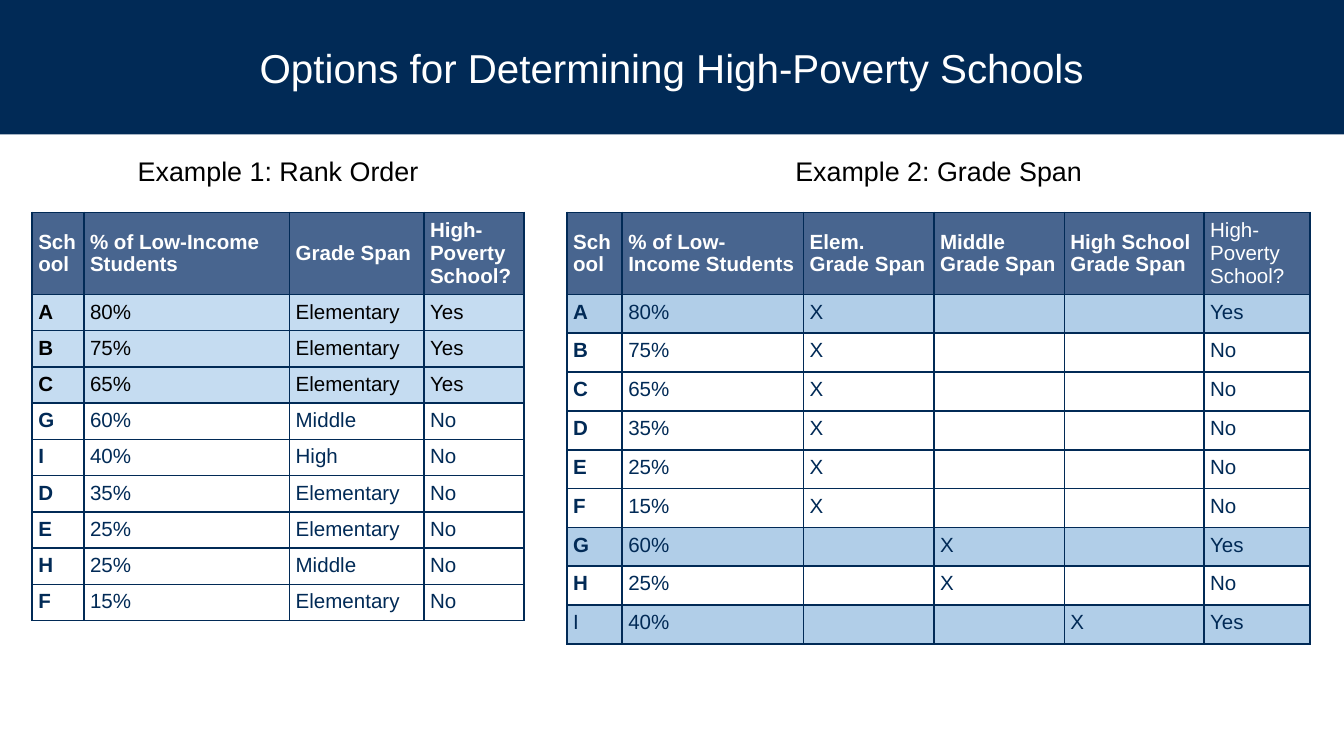
import lxml.etree
import pptx
import pptx.dml.color
import pptx.enum.shapes
import pptx.enum.text
import pptx.oxml.ns
import pptx.util

WIDTH = 10
HEIGHT = WIDTH * 9 / 16
COLUMNS = 100  # square grid cells across the slide
NAVY, SLATE, WHITE, BLACK = "012A56", "48658F", "FFFFFF", "000000"
PALE_BLUE, MID_BLUE = "C5DCF1", "B1CEE8"


def color(hex_text):
    return pptx.dml.color.RGBColor.from_string(hex_text)


def grid(units):
    return pptx.util.Inches(units * WIDTH / COLUMNS)


def sub(parent, tag, **attrs):
    return lxml.etree.SubElement(parent, pptx.oxml.ns.qn(tag), **attrs)


class Deck:
    font = "Arial"
    cell_size = 11
    side_inset = 0.45
    header_insets = (0.3, 0.3)  # top, bottom
    body_insets = (0.45, 0.4)
    header_row = 6.1

    def __init__(self):
        self.prs = pptx.Presentation()
        self.prs.slide_width = pptx.util.Inches(WIDTH)
        self.prs.slide_height = pptx.util.Inches(HEIGHT)
        self.s = self.prs.slides.add_slide(self.prs.slide_layouts[6])

    def band(self, x, y, w, h, fill):
        sp = self.s.shapes.add_shape(
            pptx.enum.shapes.MSO_SHAPE.RECTANGLE, *map(grid, (x, y, w, h)))
        sp.shadow.inherit = False
        sp.fill.solid()
        sp.fill.fore_color.rgb = color(fill)
        sp.line.fill.background()

    def style_runs(self, p, size, ink, bold=False):
        for r in p.runs:
            r.font.name = self.font
            r.font.size = pptx.util.Pt(size)
            r.font.bold = bold
            r.font.color.rgb = color(ink)

    def heading(self, text, x, y, w, h, size, ink):
        sp = self.s.shapes.add_textbox(*map(grid, (x, y, w, h)))
        tf = sp.text_frame
        tf.word_wrap = True
        tf.vertical_anchor = pptx.enum.text.MSO_ANCHOR.MIDDLE
        tf.margin_left = tf.margin_right = grid(0.7)
        tf.margin_top = tf.margin_bottom = grid(0.4)
        tf.text = text
        p = tf.paragraphs[0]
        p.alignment = pptx.enum.text.PP_ALIGN.CENTER
        p.space_before = pptx.util.Pt(5)
        self.style_runs(p, size, ink)

    def borders(self, cell):
        tc_pr = cell._tc.get_or_add_tcPr()
        for side in ("a:lnL", "a:lnR", "a:lnT", "a:lnB"):
            ln = sub(tc_pr, side, w=str(pptx.util.Pt(1)))
            sub(sub(ln, "a:solidFill"), "a:srgbClr", val=NAVY)

    def cell(self, cell, text, ink, fill=None, bold=False, header=False):
        self.borders(cell)
        if fill:
            cell.fill.solid()
            cell.fill.fore_color.rgb = color(fill)
        else:
            cell.fill.background()
        cell.margin_left = cell.margin_right = grid(self.side_inset)
        insets = self.header_insets if header else self.body_insets
        cell.margin_top, cell.margin_bottom = map(grid, insets)
        if header:
            cell.vertical_anchor = pptx.enum.text.MSO_ANCHOR.MIDDLE
        cell.text_frame.text = text
        for p in cell.text_frame.paragraphs:
            self.style_runs(p, self.cell_size, ink, bold)
            # the end mark also counts towards the row height
            end = sub(p._p, "a:endParaRPr", sz=str(self.cell_size * 100))
            sub(end, "a:latin", typeface=self.font)

    def example(self, caption, x, widths, row_height, header, rows,
                yes_fill, yes_ink, plain=()):
        """Captioned table; "Yes" rows are shaded, cells in plain are never bold."""
        w = sum(widths)
        self.heading(caption, x, 10.9, w, 3.6, 14.4, BLACK)
        heights = [self.header_row] + [row_height] * len(rows)
        table = self.s.shapes.add_table(
            len(heights), len(widths),
            *map(grid, (x, 15.8, w, sum(heights)))).table
        table.first_row = table.horz_banding = False
        for column, width in zip(table.columns, widths):
            column.width = grid(width)
        for row, height in zip(table.rows, heights):
            row.height = grid(height)
        for j, text in enumerate(header):
            self.cell(table.cell(0, j), text, WHITE, SLATE,
                      (0, j) not in plain, header=True)
        for i, values in enumerate(rows, 1):
            yes = values[-1] == "Yes"
            for j, text in enumerate(values):
                self.cell(table.cell(i, j), text,
                          yes_ink if yes else NAVY, yes_fill if yes else None,
                          j == 0 and (i, j) not in plain)


RANK_ORDER = [
    ("A", "80%", "Elementary", "Yes"),
    ("B", "75%", "Elementary", "Yes"),
    ("C", "65%", "Elementary", "Yes"),
    ("G", "60%", "Middle", "No"),
    ("I", "40%", "High", "No"),
    ("D", "35%", "Elementary", "No"),
    ("E", "25%", "Elementary", "No"),
    ("H", "25%", "Middle", "No"),
    ("F", "15%", "Elementary", "No"),
]
# school, low-income share, index of its grade span, high-poverty
GRADE_SPAN = [
    ("A", "80%", 0, "Yes"),
    ("B", "75%", 0, "No"),
    ("C", "65%", 0, "No"),
    ("D", "35%", 0, "No"),
    ("E", "25%", 0, "No"),
    ("F", "15%", 0, "No"),
    ("G", "60%", 1, "Yes"),
    ("H", "25%", 1, "No"),
    ("I", "40%", 2, "Yes"),
]


def main():
    deck = Deck()
    deck.band(0, 0, COLUMNS, 10, NAVY)
    deck.heading("Options for Determining High-Poverty Schools",
                 2.5, 2.5, 95, 5, 21.6, WHITE)
    deck.example(
        "Example 1: Rank Order", 2.4, (3.85, 15.3, 10, 7.45), 2.7,
        ("School", "% of Low-Income Students", "Grade Span",
         "High-Poverty School?"),
        RANK_ORDER, PALE_BLUE, BLACK)
    marked = [(school, share, *("X" if k == span else "" for k in range(3)), high)
              for school, share, span, high in GRADE_SPAN]
    deck.example(
        "Example 2: Grade Span", 42.2, (4.1, 13.5, 9.7, 9.7, 10.4, 7.9), 2.89,
        ("School", "% of Low-Income Students", "Elem. Grade Span",
         "Middle Grade Span", "High School\nGrade Span",
         "High- Poverty School?"),
        marked, MID_BLUE, NAVY, plain={(0, 5), (9, 0)})
    deck.prs.save("out.pptx")


if __name__ == "__main__":
    main()
